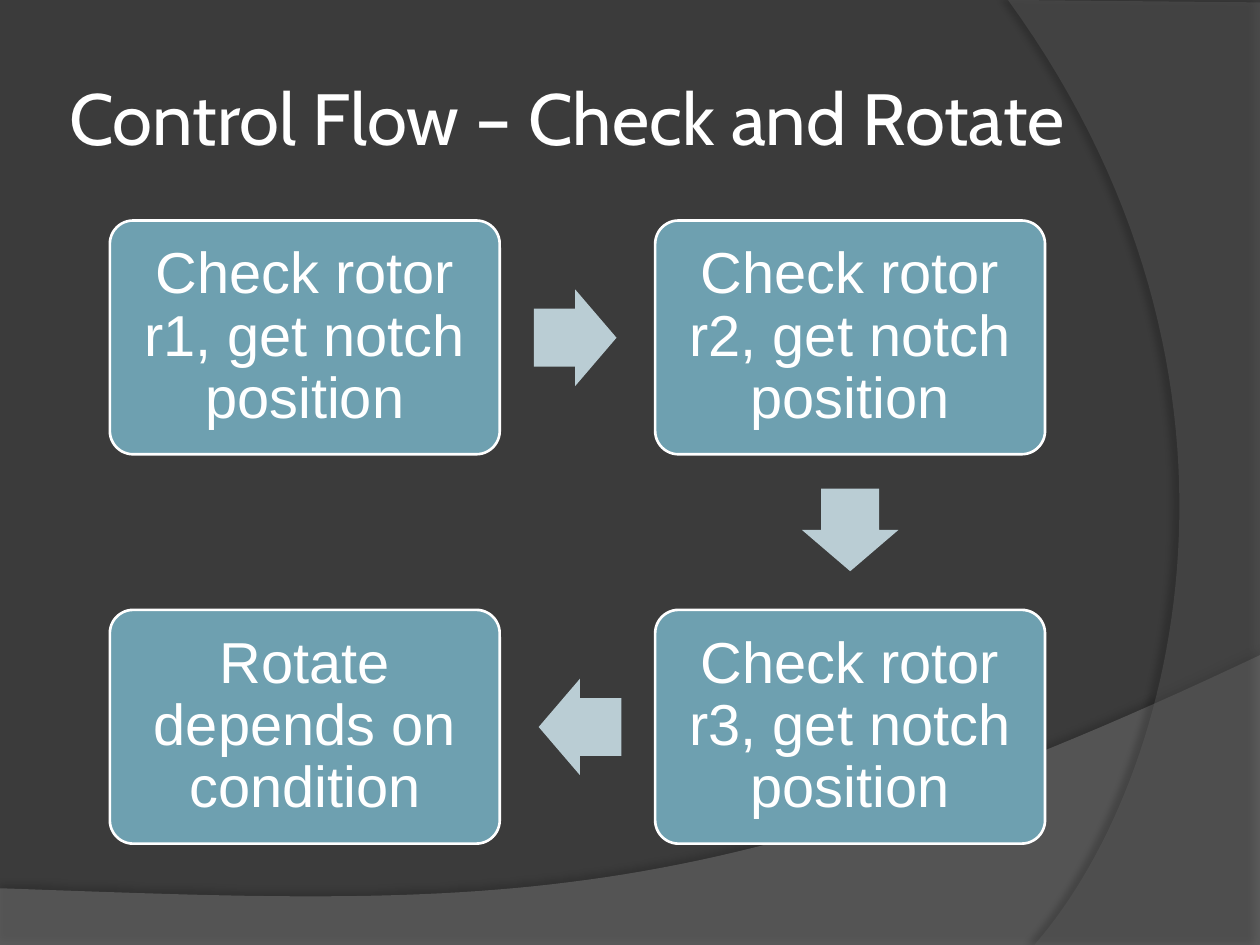
import pptx
import pptx.util
import pptx.dml.color
import pptx.enum.shapes
import pptx.enum.text
import lxml.etree
from pptx.oxml.ns import qn

Pt = pptx.util.Pt
RGB = pptx.dml.color.RGBColor.from_string
SHAPE = pptx.enum.shapes.MSO_SHAPE
ALIGN = pptx.enum.text.PP_ALIGN
MIDDLE = pptx.enum.text.MSO_ANCHOR.MIDDLE
COLORS = {"bg": "3B3B3B", "wave": "7F7F7F", "arc": "5E5E5E", "box": "6EA0B0",
          "arrow": "BACDD4", "white": "FFFFFF", "shadow": "000000"}


def format_text(shape, text, font, size, align, inset):
    tf = shape.text_frame
    tf.text = text
    tf.word_wrap = True
    tf.auto_size = pptx.enum.text.MSO_AUTO_SIZE.NONE
    tf.vertical_anchor = MIDDLE
    tf.margin_left = tf.margin_right = tf.margin_top = tf.margin_bottom = Pt(inset)
    p = tf.paragraphs[0]
    p.alignment = align
    r = p.runs[0]
    r.font.name = font
    r.font.size = Pt(size)
    r.font.color.rgb = RGB(COLORS["white"])
    return p


def bezier(points, steps=60):
    curve = []
    for i in range(steps + 1):
        t = i / steps
        weights = ((1 - t) ** 3, 3 * t * (1 - t) ** 2, 3 * t * t * (1 - t), t ** 3)
        curve.append(tuple(Pt(sum(w * pt[k] for w, pt in zip(weights, points)))
                           for k in (0, 1)))
    return curve


prs = pptx.Presentation()
prs.slide_width, prs.slide_height = Pt(720), Pt(540)
s = prs.slides.add_slide(prs.slide_layouts[5])
s.background.fill.solid()
s.background.fill.fore_color.rgb = RGB(COLORS["bg"])

backdrop = [
    ("wave", 45, [(720, 374.4), (402.5, 524.9), (281.5, 517.7), (0, 507.6)],
     [(0, 540), (720, 540)], (35, 4, 3.5, 270)),
    ("arc", 40, [(591.1, 540), (673.2, 445.7), (733, 216), (576, 0)],
     [(720, 1.4), (720, 540)], (45, 4, 4, 180)),
]
for name, opacity, curve, corners, (dark, blur, dist, angle) in backdrop:
    outline = bezier(curve) + [(Pt(x), Pt(y)) for x, y in corners]
    fb = s.shapes.build_freeform(*outline[0], scale=1.0)
    fb.add_line_segments(outline[1:], close=True)
    sp = fb.convert_to_shape()
    sp.fill.solid()
    sp.fill.fore_color.rgb = RGB(COLORS[name])
    sp.line.fill.background()
    sp.shadow.inherit = False
    spPr = sp._element.spPr
    color = spPr.find(qn("a:solidFill"))[0]
    lxml.etree.SubElement(color, qn("a:alpha"), val=str(opacity * 1000))
    shadow = lxml.etree.SubElement(
        spPr.find(qn("a:effectLst")), qn("a:outerShdw"), blurRad=str(Pt(blur)),
        dist=str(Pt(dist)), dir=str(angle * 60000), algn="ctr", rotWithShape="0")
    color = lxml.etree.SubElement(shadow, qn("a:srgbClr"), val=COLORS["shadow"])
    lxml.etree.SubElement(color, qn("a:alpha"), val=str(dark * 1000))

title = s.shapes.title
s.shapes._spTree.append(title._element)
title.left, title.top, title.width, title.height = Pt(36), Pt(21.6), Pt(588), Pt(90)
format_text(title, "Control Flow – Check and Rotate", "Cabin", 41.4, ALIGN.LEFT, 3.6)

columns, rows = (62.8, 374.4), (126, 348.5)
steps = [
    ("Check rotor r1, get notch position", 0, 0),
    ("Check rotor r2, get notch position", 1, 0),
    ("Check rotor r3, get notch position", 1, 1),
    ("Rotate depends on condition", 0, 1),
]
for text, col, row in steps:
    sp = s.shapes.add_shape(SHAPE.ROUNDED_RECTANGLE, Pt(columns[col]), Pt(rows[row]),
                            Pt(222.8), Pt(133.6))
    sp.adjustments[0] = 0.1
    sp.shadow.inherit = False
    sp.fill.solid()
    sp.fill.fore_color.rgb = RGB(COLORS["box"])
    sp.line.color.rgb = RGB(COLORS["white"])
    sp.line.width = Pt(1.5)
    p = format_text(sp, text, "Arial", 33, ALIGN.CENTER, 14)
    p.line_spacing = 0.9

arrow_w, arrow_h = 47.2, 55.2
for x, y, rotation in [(328.7, 193, 0), (485.8, 302.8, 90), (331.4, 415.4, 180)]:
    sp = s.shapes.add_shape(SHAPE.RIGHT_ARROW, Pt(x - arrow_w / 2), Pt(y - arrow_h / 2),
                            Pt(arrow_w), Pt(arrow_h))
    sp.rotation = rotation
    sp.adjustments[0] = 0.6
    sp.adjustments[1] = 0.5
    sp.shadow.inherit = False
    sp.fill.solid()
    sp.fill.fore_color.rgb = RGB(COLORS["arrow"])
    sp.line.fill.background()

prs.save("out.pptx")
